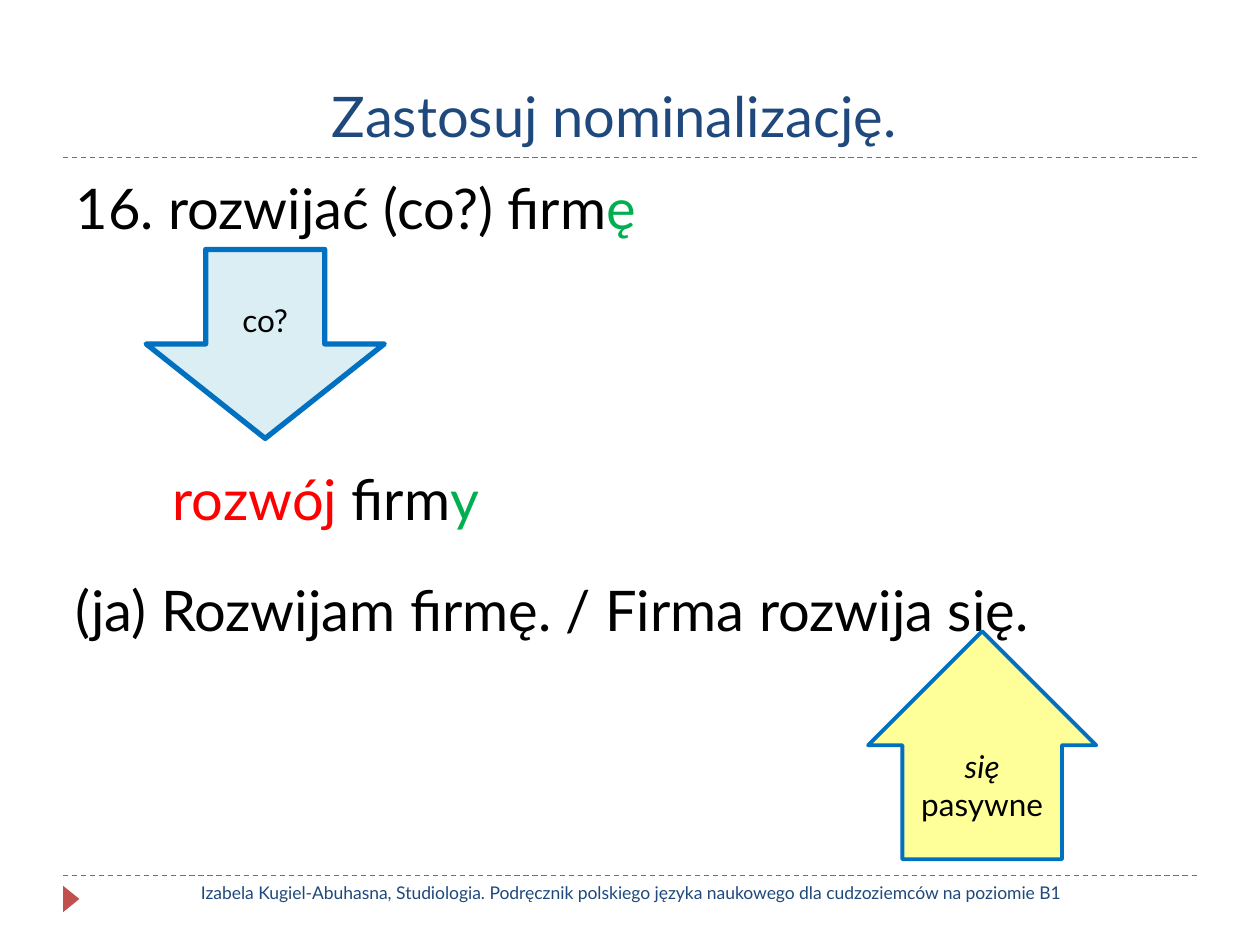
"""Build a Polish grammar slide on turning verbs into nouns."""
from dataclasses import dataclass
from typing import Optional

import lxml.etree
import pptx
import pptx.dml.color
import pptx.enum.dml
import pptx.enum.shapes
import pptx.enum.text
import pptx.oxml.ns
import pptx.util

Inches = pptx.util.Inches
Pt = pptx.util.Pt
Kind = pptx.enum.shapes.MSO_SHAPE
Align = pptx.enum.text.PP_ALIGN
Anchor = pptx.enum.text.MSO_ANCHOR
qn = pptx.oxml.ns.qn


@dataclass(frozen=True)
class Theme:
    """Colours, font and type sizes."""
    font: str = "Lato"
    ink: str = "000000"
    navy: str = "1F497D"
    green: str = "00B050"
    red: str = "FF0000"
    rule: str = "C0504D"
    edge: str = "0070C0"
    ice: str = "DBEEF4"
    lemon: str = "FFFF99"
    big: int = 32
    mid: int = 18
    small: int = 10


THEME = Theme()


@dataclass(frozen=True)
class Span:
    """A stretch of text in one style."""
    text: str
    color: str = THEME.ink
    italic: bool = False


@dataclass(frozen=True)
class Item:
    """A body paragraph with its spacing and indent."""
    spans: tuple[Span, ...]
    lines: float = 1.0
    before: float = 6
    indent: float = 0


@dataclass(frozen=True)
class Arrow:
    """A block arrow with a label."""
    kind: Kind
    box: tuple[float, float, float, float]
    fill: str
    width: float
    spans: tuple[Span, ...]
    shaft: Optional[float] = None


ITEMS = (
    Item((Span("16. rozwijać (co?) firm"), Span("ę", THEME.green))),
    Item((Span("rozwój", THEME.red), Span(" firm"), Span("y", THEME.green)),
         lines=2, before=89, indent=0.77),
    Item((Span("(ja) Rozwijam firmę. / Firma rozwija się."),), lines=1.5),
)

ARROWS = (
    Arrow(Kind.DOWN_ARROW, (1.16, 1.98, 1.89, 1.5), THEME.ice, 3,
          (Span("co?"),)),
    Arrow(Kind.UP_ARROW, (6.89, 5.01, 1.81, 1.81), THEME.lemon, 2.25,
          (Span("się", italic=True), Span(" pasywne")), shaft=0.7),
)


def rgb(code: str) -> pptx.dml.color.RGBColor:
    """Turn a hex code into a colour."""
    return pptx.dml.color.RGBColor.from_string(code)


def place(shape, box: tuple[float, float, float, float]) -> None:
    """Move and size a shape in inches."""
    shape.left, shape.top, shape.width, shape.height = map(Inches, box)


def write(para, spans: tuple[Span, ...], size: int, align: Align) -> None:
    """Fill a paragraph with styled spans."""
    para.alignment = align
    for span in spans:
        run = para.add_run()
        run.text = span.text
        run.font.name = THEME.font
        run.font.size = Pt(size)
        run.font.italic = span.italic
        run.font.color.rgb = rgb(span.color)


def add_rule(slide, y: float) -> None:
    """Draw a dashed rule across the slide."""
    line = slide.shapes.add_connector(
        pptx.enum.shapes.MSO_CONNECTOR.STRAIGHT,
        Inches(0.5), Inches(y), Inches(9.5), Inches(y))
    line.line.color.rgb = rgb(THEME.rule)
    line.line.width = Pt(0.75)
    line.line.dash_style = pptx.enum.dml.MSO_LINE.DASH
    lxml.etree.SubElement(line._element.spPr, qn("a:effectLst"))


def add_mark(slide) -> None:
    """Draw the small triangle beside the footer."""
    mark = slide.shapes.add_shape(
        Kind.ISOSCELES_TRIANGLE, *map(Inches, (0.46, 7.07, 0.21, 0.13)))
    mark.rotation = 90
    mark.shadow.inherit = False
    mark.fill.solid()
    mark.fill.fore_color.rgb = rgb(THEME.rule)
    mark.line.fill.background()


def add_title(slide) -> None:
    """Fill the title placeholder."""
    title = slide.shapes.title
    place(title, (0.5, 0.17, 9, 1.06))
    frame = title.text_frame
    frame.vertical_anchor = Anchor.BOTTOM
    frame.auto_size = pptx.enum.text.MSO_AUTO_SIZE.NONE
    frame.margin_right = Inches(0.35)
    write(frame.paragraphs[0], (Span("Zastosuj nominalizację.", THEME.navy),),
          THEME.big, Align.CENTER)


def add_body(slide, items: tuple[Item, ...]) -> None:
    """Fill the body placeholder with plain paragraphs."""
    body = slide.placeholders[1]
    place(body, (0.5, 1.33, 9, 5.4))
    frame = body.text_frame
    frame.auto_size = pptx.enum.text.MSO_AUTO_SIZE.NONE
    for spot, item in enumerate(items):
        para = frame.add_paragraph() if spot else frame.paragraphs[0]
        para.line_spacing = float(item.lines)
        para.space_before = Pt(item.before)
        props = para._p.get_or_add_pPr()
        props.set("marL", str(Inches(item.indent)))
        props.set("indent", "0")
        lxml.etree.SubElement(props, qn("a:buNone"))
        write(para, item.spans, THEME.big, Align.LEFT)


def add_foot(slide) -> None:
    """Add the source line at the bottom."""
    foot = slide.shapes.add_textbox(*map(Inches, (0.87, 6.95, 8.27, 0.4)))
    foot.text_frame.word_wrap = True
    text = ("Izabela Kugiel-Abuhasna, Studiologia. Podręcznik polskiego "
            "języka naukowego dla cudzoziemców na poziomie B1")
    write(foot.text_frame.paragraphs[0], (Span(text, THEME.navy),),
          THEME.small, Align.CENTER)


def add_arrow(slide, arrow: Arrow) -> None:
    """Draw a labelled block arrow."""
    shape = slide.shapes.add_shape(arrow.kind, *map(Inches, arrow.box))
    if arrow.shaft is not None:
        shape.adjustments[0] = arrow.shaft
    shape.shadow.inherit = False
    shape.fill.solid()
    shape.fill.fore_color.rgb = rgb(arrow.fill)
    shape.line.color.rgb = rgb(THEME.edge)
    shape.line.width = Pt(arrow.width)
    frame = shape.text_frame
    frame.word_wrap = True
    frame.vertical_anchor = Anchor.MIDDLE
    write(frame.paragraphs[0], arrow.spans, THEME.mid, Align.CENTER)


def main() -> None:
    """Build and save the deck."""
    deck = pptx.Presentation()
    deck.slide_width, deck.slide_height = Inches(10), Inches(7.5)
    slide = deck.slides.add_slide(deck.slide_layouts[1])
    for y in (6.95, 1.25):
        add_rule(slide, y)
    add_mark(slide)
    add_body(slide, ITEMS)
    add_title(slide)
    add_foot(slide)
    for arrow in ARROWS:
        add_arrow(slide, arrow)
    deck.save("out.pptx")


if __name__ == "__main__":
    main()
